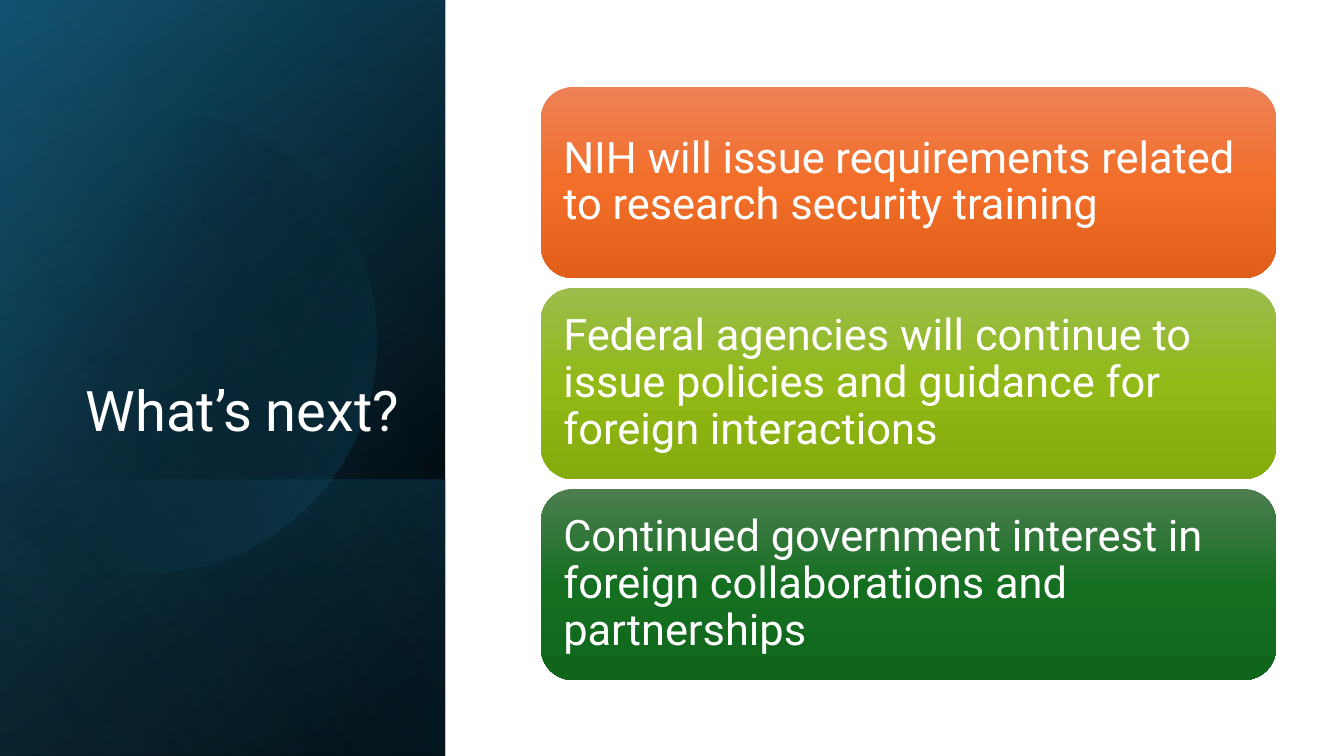
import math
import pptx
import pptx.util
import pptx.dml.color
import pptx.enum.shapes
import pptx.enum.text
import pptx.oxml
import pptx.oxml.ns

COLORS = {
    "white": "FFFFFF", "black": "000000", "navy": "104862",
    "teal": "156082", "sky": "46B1E1",
    "orange_light": "ED8257", "orange": "F26E29", "orange_dark": "E25F1A",
    "lime_light": "9CBD4E", "lime": "92B916", "lime_dark": "85AB0D",
    "green_light": "4D7E50", "green": "156F21", "green_dark": "0F661B",
}
TITLE = "What’s next?"
CARDS = [
    ("NIH will issue requirements related to research security training", "orange"),
    ("Federal agencies will continue to issue policies and guidance for foreign interactions", "lime"),
    ("Continued government interest in foreign collaborations and partnerships", "green"),
]
SLIDE_W, SLIDE_H = 1344, 756
PANEL_W, STRIP_TOP = 445, 480
PANEL = (0, 0, PANEL_W, SLIDE_H)
STRIP = (0, STRIP_TOP, PANEL_W, SLIDE_H - STRIP_TOP)
BASE_LAYERS = [
    (PANEL, [(8, "black", 100), (100, "navy", 100)], 220),
    (PANEL, [(0, "black", 0), (99, "teal", 46)], 240),
    (STRIP, [(2, "teal", 29), (100, "black", 30)], 140),
]
DISC_STOPS, DISC_ANGLE = [(29, "black", 0), (100, "teal", 43)], 30
GLOW = (PANEL, [(0, "black", 0), (99, "sky", 11)], 150)
DISC_X, DISC_Y, DISC_R = 144, 341, 232
CARD_X, CARD_Y, CARD_W, CARD_H, CARD_PITCH = 541, 87, 735, 191, 201
EMU_PER_PX = 914400 / 100.8

SHAPE = pptx.enum.shapes.MSO_SHAPE
ALIGN = pptx.enum.text.PP_ALIGN
ANCHOR = pptx.enum.text.MSO_ANCHOR


def px(n):
    return pptx.util.Emu(round(n * EMU_PER_PX))


def paint(sp, stops, angle):
    sp.shadow.inherit = False
    sp.line.fill.background()
    sp.fill.background()
    gs = "".join(
        f'<a:gs pos="{pos * 1000}"><a:srgbClr val="{COLORS[color]}">'
        f'<a:alpha val="{alpha * 1000}"/></a:srgbClr></a:gs>'
        for pos, color, alpha in stops)
    grad = pptx.oxml.parse_xml(
        f'<a:gradFill {pptx.oxml.ns.nsdecls("a")} rotWithShape="1">'
        f'<a:gsLst>{gs}</a:gsLst><a:lin ang="{angle * 60000}" scaled="0"/></a:gradFill>')
    props = sp._element.spPr
    props.replace(props.find(pptx.oxml.ns.qn("a:noFill")), grad)


def add_block(shapes, kind, box, stops, angle):
    sp = shapes.add_shape(kind, *map(px, box))
    paint(sp, stops, angle)
    return sp


def add_disc(shapes):
    reach = math.degrees(math.acos(-DISC_X / DISC_R))
    steps = 120
    angles = [math.radians(-reach + 2 * reach * i / steps) for i in range(steps + 1)]
    points = [(px(max(0, DISC_X + DISC_R * math.cos(a))),
               px(DISC_Y + DISC_R * math.sin(a))) for a in angles]
    builder = shapes.build_freeform(*points[0])
    builder.add_line_segments(points[1:], close=True)
    paint(builder.convert_to_shape(), DISC_STOPS, DISC_ANGLE)


def write(sp, text, size=31, color="white", align=ALIGN.LEFT, anchor=ANCHOR.MIDDLE,
          inset_x=13, inset_y=13):
    tf = sp.text_frame
    tf.word_wrap = True
    tf.vertical_anchor = anchor
    tf.margin_left = tf.margin_right = px(inset_x)
    tf.margin_top = tf.margin_bottom = px(inset_y)
    p = tf.paragraphs[0]
    p.alignment = align
    p.line_spacing = 0.9
    r = p.add_run()
    r.text = text
    r.font.name = "Roboto"
    r.font.size = pptx.util.Pt(size)
    r.font.color.rgb = pptx.dml.color.RGBColor.from_string(COLORS[color])


def main():
    prs = pptx.Presentation()
    prs.slide_width, prs.slide_height = px(SLIDE_W), px(SLIDE_H)
    s = prs.slides.add_slide(prs.slide_layouts[6])

    for layer in BASE_LAYERS:
        add_block(s.shapes, SHAPE.RECTANGLE, *layer)
    add_disc(s.shapes)
    add_block(s.shapes, SHAPE.RECTANGLE, *GLOW)

    title = s.shapes.add_textbox(px(65), px(185), px(344), px(264))
    write(title, TITLE, size=40, align=ALIGN.RIGHT, anchor=ANCHOR.BOTTOM,
          inset_x=10, inset_y=5)

    for i, (text, hue) in enumerate(CARDS):
        box = (CARD_X, CARD_Y + i * CARD_PITCH, CARD_W, CARD_H)
        stops = [(0, hue + "_light", 100), (50, hue, 100), (100, hue + "_dark", 100)]
        write(add_block(s.shapes, SHAPE.ROUNDED_RECTANGLE, box, stops, 90), text)

    prs.save("out.pptx")


if __name__ == "__main__":
    main()
